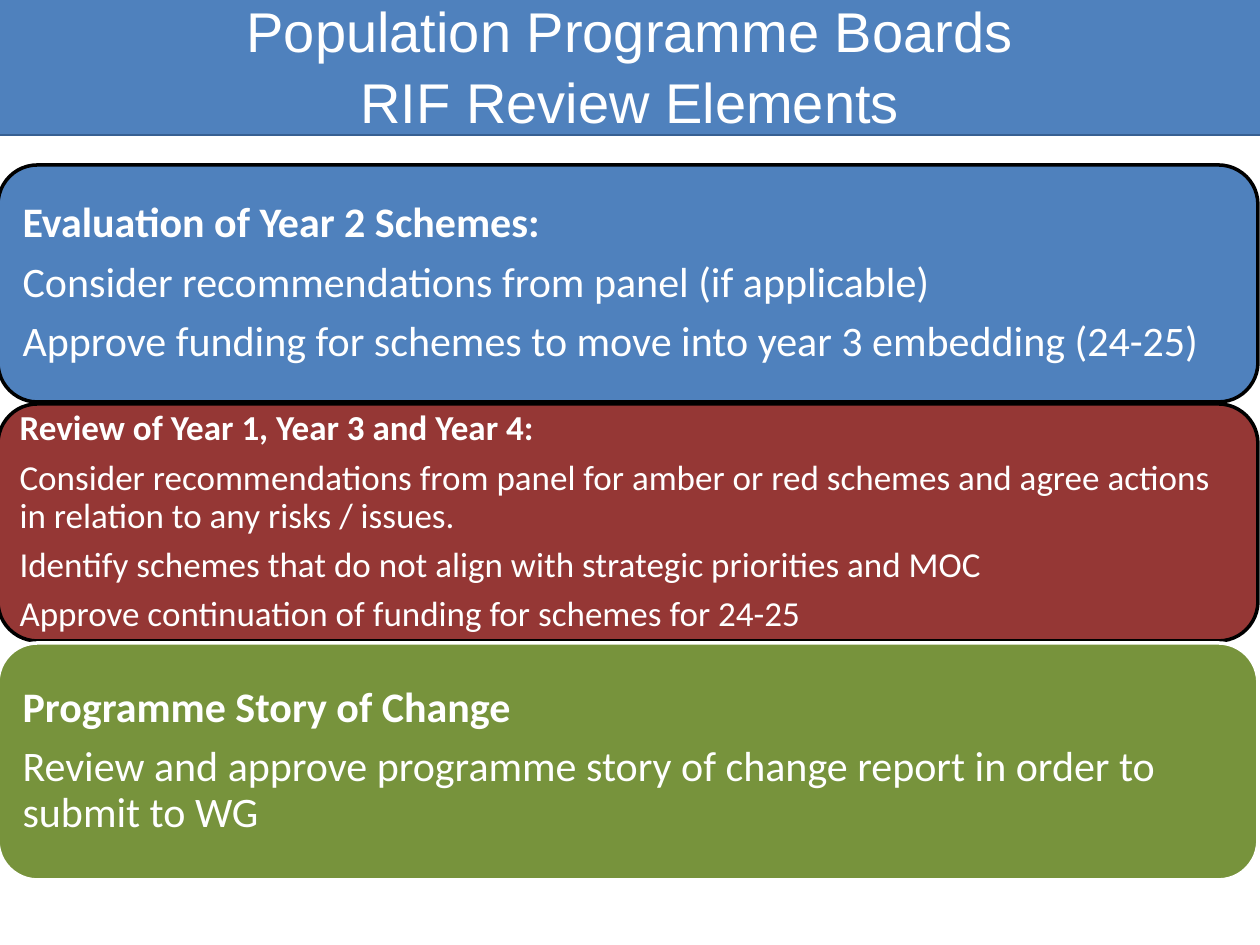
from pptx import Presentation
from pptx.dml.color import RGBColor
from pptx.enum.shapes import MSO_SHAPE
from pptx.enum.text import MSO_ANCHOR, PP_ALIGN
from pptx.util import Emu, Pt

RECTANGLE, ROUNDED = MSO_SHAPE.RECTANGLE, MSO_SHAPE.ROUNDED_RECTANGLE
TOP, MIDDLE = MSO_ANCHOR.TOP, MSO_ANCHOR.MIDDLE
LEFT, CENTER = PP_ALIGN.LEFT, PP_ALIGN.CENTER

WHITE = RGBColor(0xFF, 0xFF, 0xFF)
BLACK = RGBColor(0x00, 0x00, 0x00)
BLUE = RGBColor(0x4F, 0x81, 0xBD)
DARK_BLUE = RGBColor(0x37, 0x60, 0x92)
RED = RGBColor(0x95, 0x37, 0x35)
GREEN = RGBColor(0x77, 0x93, 0x3C)

TITLE = ["Population Programme Boards", "RIF Review Elements"]

# fill, outline, text size in points, padding in px, heading, points
ELEMENTS = [
    (BLUE, BLACK, 24, 13, "Evaluation of Year 2 Schemes:", [
        "Consider recommendations from panel (if applicable)",
        "Approve funding for schemes to move into year 3 embedding (24-25)",
    ]),
    (RED, BLACK, 20, 10, "Review of Year 1, Year 3 and Year 4:", [
        "Consider recommendations from panel for amber or red schemes "
        "and agree actions in relation to any risks / issues.",
        "Identify schemes that do not align with strategic priorities and MOC",
        "Approve continuation of funding for schemes for 24-25",
    ]),
    (GREEN, WHITE, 24, 13, "Programme Story of Change", [
        "Review and approve programme story of change report in order to submit to WG",
    ]),
]

SLIDE_WIDTH, SLIDE_HEIGHT = 1260, 945
TITLE_BOX = (-15, -14, 1290, 149)
PANEL_LEFT, PANEL_TOP, PANEL_WIDTH, PANEL_HEIGHT = -2, 165, 1260, 237
PANEL_PITCH = 239


def px(count):
    return Emu(count * 914400 // 126)


def add_panel(slide, kind, box, fill, outline, outline_width):
    panel = slide.shapes.add_shape(kind, *map(px, box))
    panel.shadow.inherit = False
    panel.fill.solid()
    panel.fill.fore_color.rgb = fill
    panel.line.color.rgb = outline
    panel.line.width = Pt(outline_width)
    return panel


def write_lines(panel, lines, font_name, size, align, anchor, line_spacing, gap=0):
    """Put each line in its own paragraph, with gap points after it."""
    frame = panel.text_frame
    frame.word_wrap = True
    frame.vertical_anchor = anchor
    for index, line in enumerate(lines):
        paragraph = frame.add_paragraph() if index else frame.paragraphs[0]
        paragraph.text = line
        paragraph.alignment = align
        paragraph.line_spacing = line_spacing
        paragraph.space_after = Pt(gap)
        paragraph.font.name = font_name
        paragraph.font.size = Pt(size)
        paragraph.font.color.rgb = WHITE
    return frame


def main():
    presentation = Presentation()
    presentation.slide_width = px(SLIDE_WIDTH)
    presentation.slide_height = px(SLIDE_HEIGHT)
    slide = presentation.slides.add_slide(presentation.slide_layouts[6])

    banner = add_panel(slide, RECTANGLE, TITLE_BOX, BLUE, DARK_BLUE, 0.75)
    write_lines(banner, TITLE, "Arial", 32, CENTER, TOP, 1.06)

    for row, (fill, outline, size, padding, heading, points) in enumerate(ELEMENTS):
        box = (PANEL_LEFT, PANEL_TOP + row * PANEL_PITCH, PANEL_WIDTH, PANEL_HEIGHT)
        panel = add_panel(slide, ROUNDED, box, fill, outline, 2)
        frame = write_lines(panel, [heading, *points], "Calibri", size,
                            LEFT, MIDDLE, 0.9, round(size * 0.33, 1))
        frame.paragraphs[0].font.bold = True
        frame.margin_left = frame.margin_right = px(padding)
        frame.margin_top = frame.margin_bottom = px(padding)

    presentation.save("out.pptx")


if __name__ == "__main__":
    main()
